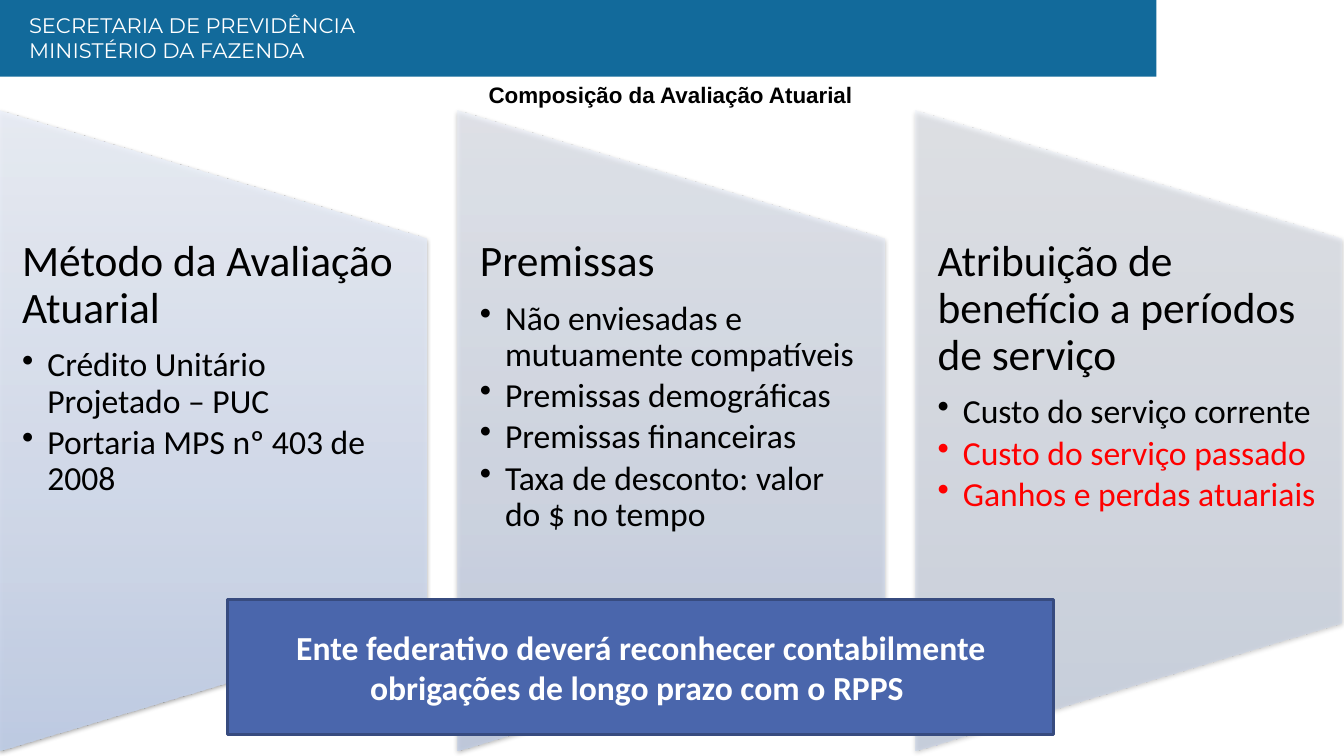
import lxml.etree
import pptx
import pptx.dml.color
import pptx.enum.shapes
import pptx.enum.text
import pptx.oxml
import pptx.util

Inches = pptx.util.Inches
Pt = pptx.util.Pt
Shapes = pptx.enum.shapes.MSO_SHAPE
Align = pptx.enum.text.PP_ALIGN
Anchor = pptx.enum.text.MSO_ANCHOR

NAMESPACE = 'xmlns:a="http://schemas.openxmlformats.org/drawingml/2006/main"'
GRADIENT = [(0, "BFCDE7"), (35, "D2DBED"), (100, "EDF1F9")]
COLUMNS = [
    ("Método da Avaliação Atuarial", 90, [
        ("Crédito Unitário Projetado – PUC", "000000"),
        ("Portaria MPS nº 403 de 2008", "000000"),
    ]),
    ("Premissas", 70, [
        ("Não enviesadas e mutuamente compatíveis", "000000"),
        ("Premissas demográficas", "000000"),
        ("Premissas financeiras", "000000"),
        ("Taxa de desconto: valor do $ no tempo", "000000"),
    ]),
    ("Atribuição de benefício a períodos de serviço", 50, [
        ("Custo do serviço corrente", "000000"),
        ("Custo do serviço passado", "FF0000"),
        ("Ganhos e perdas atuariais", "FF0000"),
    ]),
]


def color(value):
    """Turn a hex string into a colour."""
    return pptx.dml.color.RGBColor.from_string(value)


def add_run(paragraph, text, size, font, value, bold=False):
    """Add one formatted run to a paragraph."""
    run = paragraph.add_run()
    run.text = text
    run.font.size = Pt(size)
    run.font.name = font
    run.font.bold = bold
    run.font.color.rgb = color(value)


def add_text_frame(slide, left, top, width, height):
    """Add a wrapping text box and return its text frame."""
    box = slide.shapes.add_textbox(Inches(left), Inches(top), Inches(width), Inches(height))
    box.text_frame.word_wrap = True
    return box.text_frame


def add_rectangle(slide, left, top, width, height, fill, line=None):
    """Add a flat rectangle with an optional outline."""
    shape = slide.shapes.add_shape(
        Shapes.RECTANGLE, Inches(left), Inches(top), Inches(width), Inches(height))
    shape.shadow.inherit = False
    shape.fill.solid()
    shape.fill.fore_color.rgb = color(fill)
    if line:
        shape.line.color.rgb = color(line)
        shape.line.width = Pt(2)
    else:
        shape.line.fill.background()
    return shape


def add_header(slide, left, top, width, height):
    """Draw the blue band with the two institution lines."""
    add_rectangle(slide, left, top, width, height, "126A9B")
    frame = add_text_frame(slide, left + 0.2, top + 0.08, 7.66, 0.61)
    for index, text in enumerate(["SECRETARIA DE PREVIDÊNCIA", "MINISTÉRIO DA FAZENDA"]):
        paragraph = frame.paragraphs[0] if index == 0 else frame.add_paragraph()
        add_run(paragraph, text, 15, "Montserrat", "FFFFFF")


def add_title(slide, left, top, width, height):
    """Write the centred slide title."""
    paragraph = add_text_frame(slide, left, top, width, height).paragraphs[0]
    paragraph.alignment = Align.CENTER
    add_run(paragraph, "Composição da Avaliação Atuarial", 16, "Arial", "000000", True)


def add_panel(slide, left, top, width, height, opacity):
    """Draw a trapezoid turned on its side with a translucent gradient and a shadow."""
    panel = slide.shapes.add_shape(
        Shapes.FLOWCHART_MANUAL_OPERATION,
        Inches(left + (width - height) / 2), Inches(top + (height - width) / 2),
        Inches(height), Inches(width))
    panel.rotation = 270
    panel.line.fill.background()
    stops = "".join(
        f'<a:gs pos="{position * 1000}"><a:srgbClr val="{value}">'
        f'<a:alpha val="{opacity * 1000}"/></a:srgbClr></a:gs>'
        for position, value in GRADIENT)
    gradient = pptx.oxml.parse_xml(
        f'<a:gradFill {NAMESPACE} rotWithShape="0"><a:gsLst>{stops}</a:gsLst>'
        '<a:lin ang="16200000" scaled="1"/></a:gradFill>')
    shadow = pptx.oxml.parse_xml(
        f'<a:effectLst {NAMESPACE}><a:outerShdw blurRad="{Pt(3.1)}" dist="{Pt(1.6)}" '
        'dir="5400000" rotWithShape="0"><a:srgbClr val="000000"><a:alpha val="38000"/>'
        '</a:srgbClr></a:outerShdw></a:effectLst>')
    properties = panel.element.spPr
    properties.insert(2, gradient)
    properties.append(shadow)


def add_bullet(paragraph):
    """Give a paragraph a round bullet with a hanging indent."""
    properties = paragraph._p.get_or_add_pPr()
    properties.set("marL", str(Inches(0.25)))
    properties.set("indent", str(-Inches(0.25)))
    properties.append(pptx.oxml.parse_xml(f'<a:buChar {NAMESPACE} char="•"/>'))


def set_spacing(paragraph, percent):
    """Set tight lines and a space after relative to the text size."""
    paragraph.line_spacing = 0.9
    paragraph.space_after = Pt(0)
    after = paragraph._p.pPr.find(pptx.oxml.ns.qn("a:spcAft"))
    after.remove(after[0])
    share = lxml.etree.SubElement(after, pptx.oxml.ns.qn("a:spcPct"))
    share.set("val", str(percent * 1000))


def add_column(slide, left, top, width, height, heading, opacity, items):
    """Draw one panel with its heading and bulleted items."""
    add_panel(slide, left, top, width, height, opacity)
    frame = add_text_frame(slide, left, top + height / 5, width, height * 3 / 5)
    frame.margin_left, frame.margin_right = Inches(0.22), Inches(0.21)
    frame.margin_top = frame.margin_bottom = 0
    set_spacing(frame.paragraphs[0], 35)
    add_run(frame.paragraphs[0], heading, 31, "Calibri", "000000")
    for text, value in items:
        paragraph = frame.add_paragraph()
        paragraph.level = 1
        add_bullet(paragraph)
        set_spacing(paragraph, 15)
        add_run(paragraph, text, 24, "Calibri", value)


def add_conclusion(slide, left, top, width, height):
    """Draw the box with the closing statement."""
    box = add_rectangle(slide, left, top, width, height, "4A66AC", "374B7F")
    frame = box.text_frame
    frame.word_wrap = True
    frame.vertical_anchor = Anchor.MIDDLE
    frame.paragraphs[0].alignment = Align.CENTER
    text = "Ente federativo deverá reconhecer contabilmente obrigações de longo prazo com o RPPS "
    add_run(frame.paragraphs[0], text, 24, "Calibri", "FFFFFF", True)


def main():
    """Build the slide and save it."""
    presentation = pptx.Presentation()
    presentation.slide_width = Inches(13.33)
    presentation.slide_height = Inches(7.5)
    slide = presentation.slides.add_slide(presentation.slide_layouts[6])
    add_header(slide, -0.01, -0.01, 11.48, 0.77)
    add_title(slide, -0.01, 0.76, 13.32, 0.37)
    for index, (heading, opacity, items) in enumerate(COLUMNS):
        add_column(slide, index * 4.54, 1.1, 4.23, 6.35, heading, opacity, items)
    add_conclusion(slide, 2.26, 5.95, 8.19, 1.34)
    presentation.save("out.pptx")


if __name__ == "__main__":
    main()
